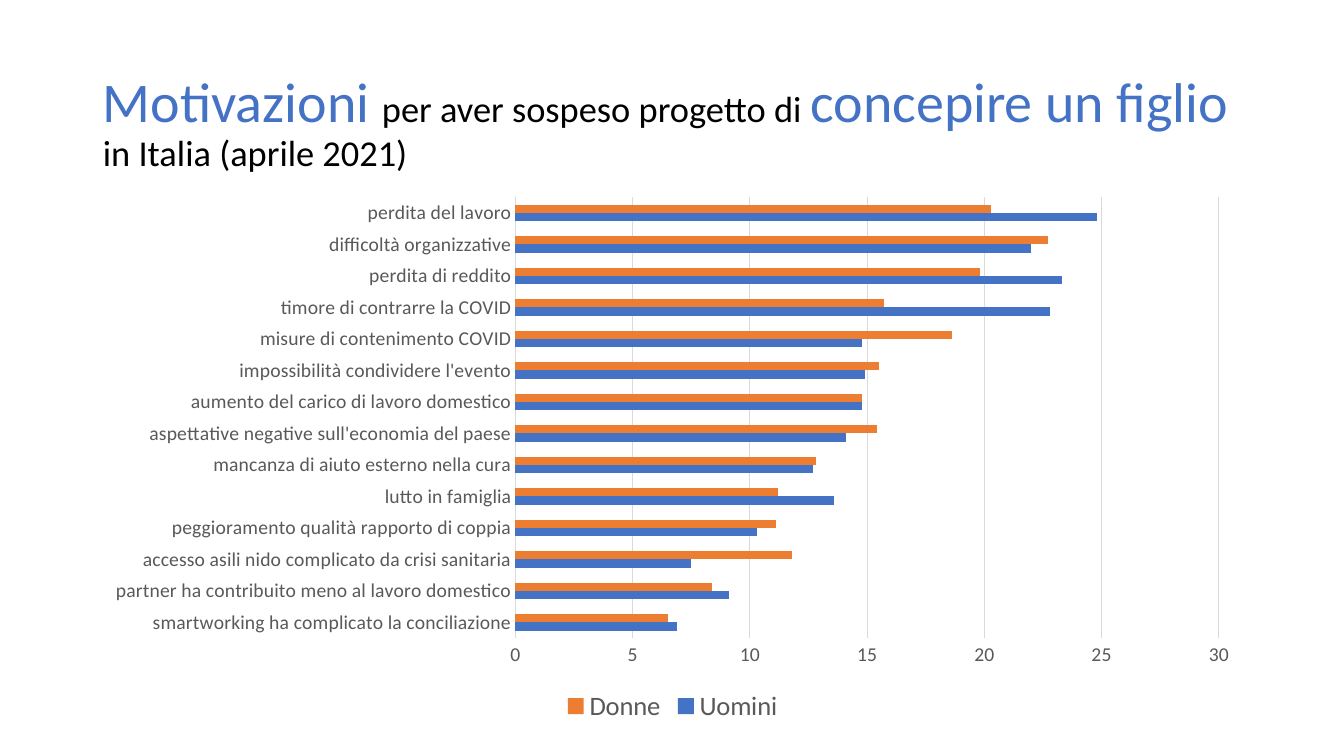
from typing import NamedTuple

from pptx import Presentation
from pptx.chart.axis import CategoryAxis, ValueAxis
from pptx.chart.data import CategoryChartData
from pptx.dml.color import RGBColor
from pptx.enum.chart import XL_CHART_TYPE, XL_LEGEND_POSITION, XL_TICK_MARK
from pptx.enum.text import MSO_ANCHOR, MSO_AUTO_SIZE
from pptx.slide import Slide
from pptx.text.text import Font
from pptx.util import Inches, Pt

COLORS = {
    "men": "4472C4",
    "women": "ED7D31",
    "title": "000000",
    "label": "595959",
    "grid": "D9D9D9",
}
FONT_NAME = "Calibri"
LEFT, WIDTH = Inches(0.92), Inches(11.5)


class TitleSpan(NamedTuple):
    text: str
    size: int
    color: str


class Reason(NamedTuple):
    label: str
    men: float
    women: float


TITLE_SPANS = [
    TitleSpan("Motivazioni ", 40, "men"),
    TitleSpan("per aver sospeso progetto di ", 26, "title"),
    TitleSpan("concepire un figlio ", 40, "men"),
    TitleSpan("in Italia (aprile 2021)", 26, "title"),
]

# Listed from the bottom of the chart to the top
REASONS = [
    Reason("smartworking ha complicato la conciliazione", 6.9, 6.5),
    Reason("partner ha contribuito meno al lavoro domestico", 9.1, 8.4),
    Reason("accesso asili nido complicato da crisi sanitaria", 7.5, 11.8),
    Reason("peggioramento qualità rapporto di coppia", 10.3, 11.1),
    Reason("lutto in famiglia", 13.6, 11.2),
    Reason("mancanza di aiuto esterno nella cura", 12.7, 12.8),
    Reason("aspettative negative sull'economia del paese", 14.1, 15.4),
    Reason("aumento del carico di lavoro domestico", 14.8, 14.8),
    Reason("impossibilità condividere l'evento", 14.9, 15.5),
    Reason("misure di contenimento COVID", 14.8, 18.6),
    Reason("timore di contrarre la COVID", 22.8, 15.7),
    Reason("perdita di reddito", 23.3, 19.8),
    Reason("difficoltà organizzative", 22, 22.7),
    Reason("perdita del lavoro", 24.8, 20.3),
]


def color(name: str) -> RGBColor:
    return RGBColor.from_string(COLORS[name])


def style_font(font: Font, size: int, color_name: str) -> None:
    font.name = FONT_NAME
    font.size = Pt(size)
    font.color.rgb = color(color_name)


def add_title(page: Slide) -> None:
    box = page.shapes.title
    box.left, box.top = LEFT, Inches(0.61)
    box.width, box.height = WIDTH, Inches(1.24)
    frame = box.text_frame
    frame.word_wrap = True
    frame.auto_size = MSO_AUTO_SIZE.NONE
    frame.vertical_anchor = MSO_ANCHOR.MIDDLE
    para = frame.paragraphs[0]
    para.line_spacing = 0.9
    para.alignment = 1
    para.font.name = FONT_NAME
    for title_span in TITLE_SPANS:
        span = para.add_run()
        span.text = title_span.text
        style_font(span.font, title_span.size, title_span.color)


def style_axis(axis: CategoryAxis | ValueAxis) -> None:
    axis.major_tick_mark = axis.minor_tick_mark = XL_TICK_MARK.NONE
    style_font(axis.tick_labels.font, 14, "label")


def add_reasons_chart(page: Slide) -> None:
    data = CategoryChartData()
    data.categories = [reason.label for reason in REASONS]
    data.add_series("Uomini", [reason.men for reason in REASONS])
    data.add_series("Donne", [reason.women for reason in REASONS])
    chart = page.shapes.add_chart(
        XL_CHART_TYPE.BAR_CLUSTERED, LEFT, Inches(1.85), WIDTH, Inches(5.37), data
    ).chart
    chart.has_title = False
    style_font(chart.font, 10, "title")

    plot = chart.plots[0]
    plot.gap_width = 182
    plot.vary_by_categories = False
    for series, color_name in zip(plot.series, ("men", "women")):
        series.format.fill.solid()
        series.format.fill.fore_color.rgb = color(color_name)

    style_axis(chart.category_axis)
    style_axis(chart.value_axis)
    chart.value_axis.minimum_scale = 0
    chart.value_axis.maximum_scale = 30
    chart.value_axis.major_unit = 5
    chart.value_axis.format.line.fill.background()
    grid = chart.value_axis.major_gridlines
    for line in (chart.category_axis.format.line, grid.format.line):
        line.color.rgb = color("grid")
        line.width = Pt(0.75)

    chart.has_legend = True
    chart.legend.position = XL_LEGEND_POSITION.BOTTOM
    chart.legend.include_in_layout = False
    style_font(chart.legend.font, 19, "label")


def main() -> None:
    deck = Presentation()
    deck.slide_width, deck.slide_height = Inches(13.33), Inches(7.5)
    page = deck.slides.add_slide(deck.slide_layouts[5])
    add_title(page)
    add_reasons_chart(page)
    deck.save("out.pptx")


if __name__ == "__main__":
    main()
